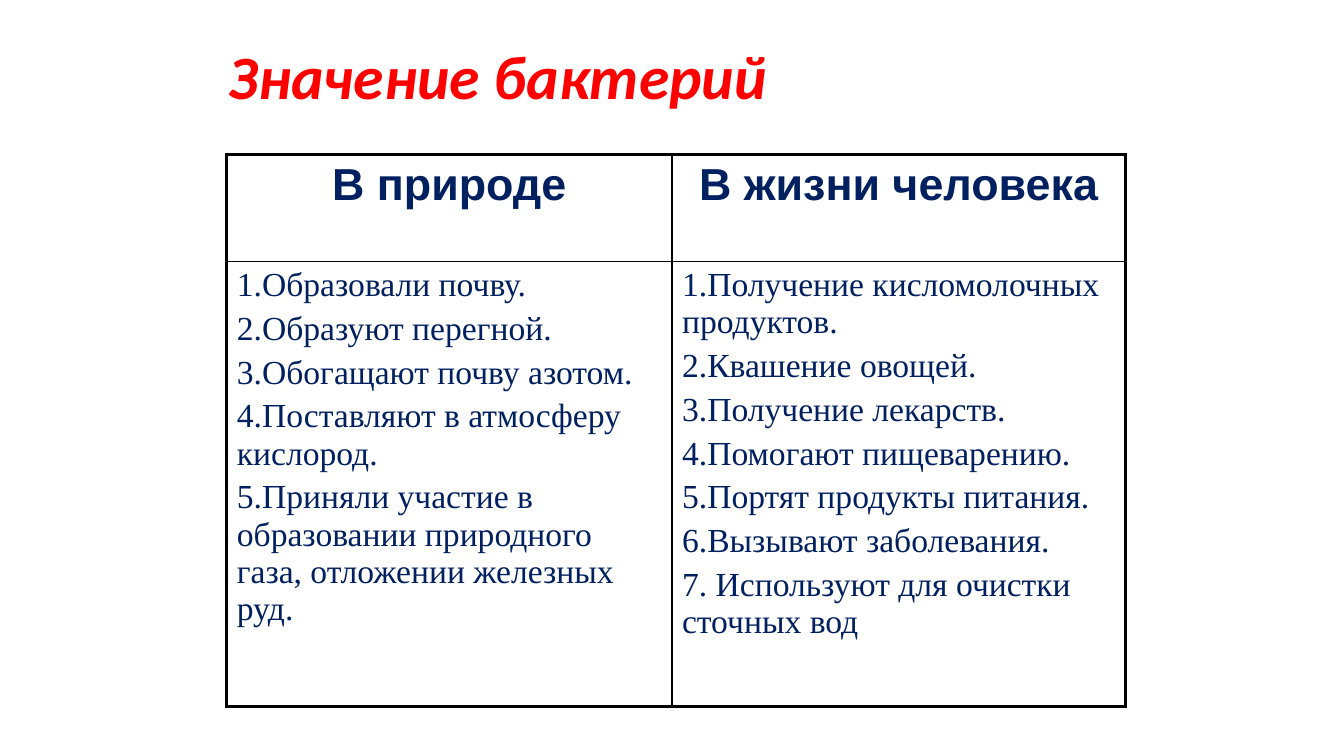
from lxml.etree import SubElement
from pptx import Presentation
from pptx.dml.color import RGBColor
from pptx.enum.text import MSO_ANCHOR as Anchor, MSO_AUTO_SIZE as AutoSize, PP_ALIGN as Align
from pptx.oxml.ns import qn
from pptx.util import Pt

PX = 9525
COLORS = {"title": "FF0000", "text": "002060", "border": "000000"}
OUTER, INNER = 2.25, 1

TITLE_FONT = {"name": "Calibri", "size": Pt(44), "bold": True, "italic": True}
HEADER_FONT = {"name": "Arial", "size": Pt(32), "bold": True}
BODY_FONT = {"name": "Times New Roman", "size": Pt(24), "bold": False}

COLUMNS = {
    "В природе": [
        "1.Образовали почву.",
        "2.Образуют перегной.",
        "3.Обогащают почву азотом.",
        "4.Поставляют в атмосферу кислород.",
        "5.Приняли участие в образовании природного газа, отложении железных руд.",
    ],
    "В жизни человека": [
        "1.Получение кисломолочных продуктов.",
        "2.Квашение овощей.",
        "3.Получение лекарств.",
        "4.Помогают пищеварению.",
        "5.Портят продукты питания.",
        "6.Вызывают заболевания.",
        "7. Используют для очистки сточных вод",
    ],
}
COLUMN_WIDTHS = [424, 432]
ROW_HEIGHTS = [102, 424]


def set_attributes(target, values):
    for name, value in values.items():
        setattr(target, name, value)


def add_span(para, text, font, color):
    span = para.add_run()
    span.text = text
    set_attributes(span.font, font)
    span.font.color.rgb = RGBColor.from_string(COLORS[color])


def set_title(page, text):
    title = page.shapes.title
    set_attributes(title, {"left": 208 * PX, "top": 16 * PX,
                           "width": 864 * PX, "height": 120 * PX})
    set_attributes(title.text_frame, {"auto_size": AutoSize.NONE, "word_wrap": True,
                                      "vertical_anchor": Anchor.MIDDLE})
    para = title.text_frame.paragraphs[0]
    set_attributes(para, {"alignment": Align.LEFT, "line_spacing": 0.9})
    add_span(para, text, TITLE_FONT, "title")


def set_borders(cell, widths):
    """Draw the cell's edges; widths are points by edge tag."""
    properties = cell._tc.get_or_add_tcPr()
    for edge, width in widths.items():
        line = SubElement(properties, qn(f"a:{edge}"), w=str(Pt(width)))
        fill = SubElement(line, qn("a:solidFill"))
        SubElement(fill, qn("a:srgbClr"), val=COLORS["border"])


def fill_cell(cell, lines, font, alignment):
    frame = cell.text_frame
    for index, text in enumerate(lines):
        para = frame.add_paragraph() if index else frame.paragraphs[0]
        para.alignment = alignment
        para.space_before = Pt(4.8 if index else 0)
        add_span(para, text, font, "text")


def add_meaning_table(page):
    frame = page.shapes.add_table(len(ROW_HEIGHTS), len(COLUMN_WIDTHS), 216 * PX, 147 * PX,
                                  sum(COLUMN_WIDTHS) * PX, sum(ROW_HEIGHTS) * PX)
    table = frame.table
    set_attributes(table, {"first_row": False, "horz_banding": False})
    for row, height in zip(table.rows, ROW_HEIGHTS):
        row.height = height * PX
    for x, (heading, points) in enumerate(COLUMNS.items()):
        table.columns[x].width = COLUMN_WIDTHS[x] * PX
        fill_cell(table.cell(0, x), [heading], HEADER_FONT, Align.CENTER)
        fill_cell(table.cell(1, x), points, BODY_FONT, Align.LEFT)
        for y in range(len(ROW_HEIGHTS)):
            cell = table.cell(y, x)
            set_borders(cell, {
                "lnL": OUTER if x == 0 else INNER,
                "lnR": OUTER if x == len(COLUMN_WIDTHS) - 1 else INNER,
                "lnT": OUTER if y == 0 else INNER,
                "lnB": OUTER if y == len(ROW_HEIGHTS) - 1 else INNER,
            })
            cell.fill.background()


def main():
    deck = Presentation()
    set_attributes(deck, {"slide_width": 1280 * PX, "slide_height": 720 * PX})
    page = deck.slides.add_slide(deck.slide_layouts.get_by_name("Title Only"))
    set_title(page, "Значение бактерий")
    add_meaning_table(page)
    deck.save("out.pptx")


if __name__ == "__main__":
    main()
